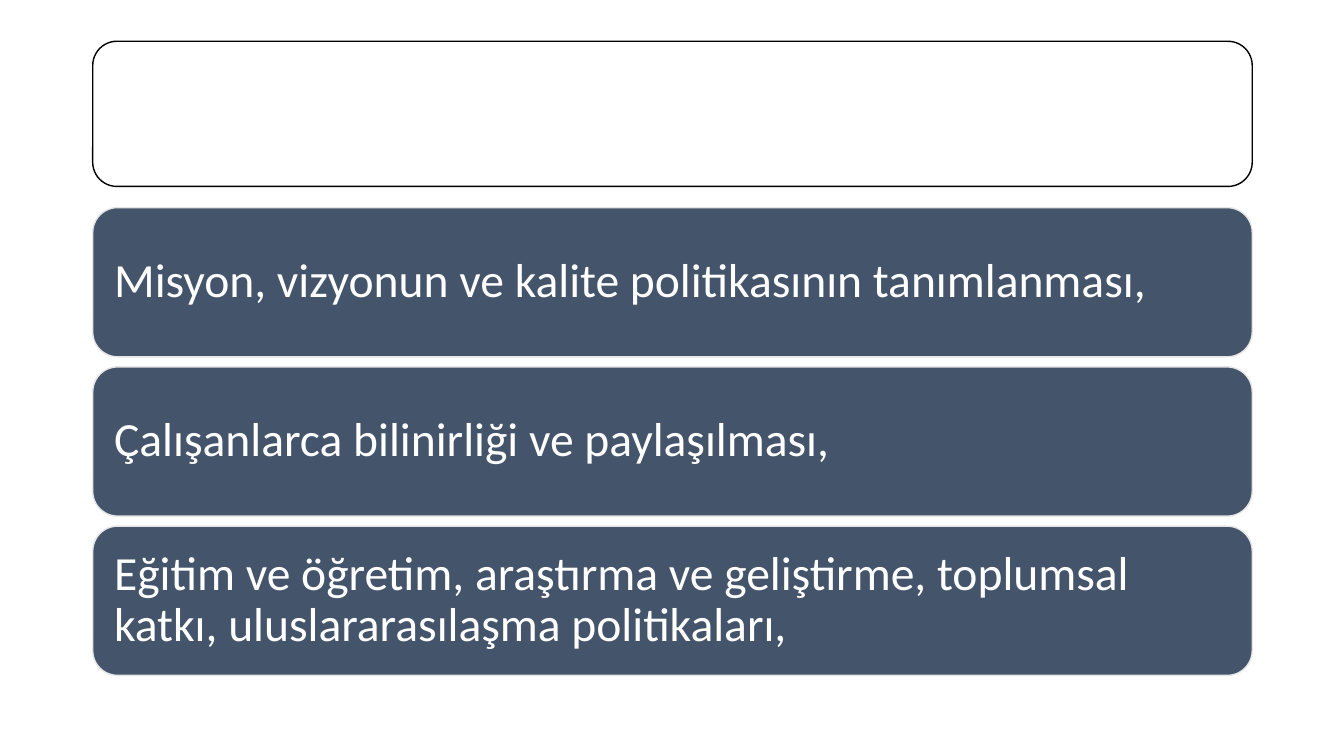
from pptx import Presentation
from pptx.dml.color import RGBColor
from pptx.enum.shapes import MSO_SHAPE
from pptx.enum.text import MSO_ANCHOR, PP_ALIGN
from pptx.util import Pt

EMU_PER_PX = 9144  # 100 px to the inch
COLORS = {"white": "FFFFFF", "slate": "44546A", "mist": "E7E6E6", "black": "000000"}

LEFT, WIDTH = 92, 1150
TITLE_TOP, TITLE_HEIGHT = 41, 144
POLICY_TOP, POLICY_HEIGHT, POLICY_PITCH = 206, 148, 158
POLICIES = [
    "Misyon, vizyonun ve kalite politikasının tanımlanması,",
    "Çalışanlarca bilinirliği ve paylaşılması,",
    "Eğitim ve öğretim, araştırma ve geliştirme, toplumsal katkı, "
    "uluslararasılaşma politikaları,",
]


def px(length):
    return length * EMU_PER_PX


def rgb(name):
    return RGBColor.from_string(COLORS[name])


class SlideBuilder:
    font = "Calibri"
    text_size = 34
    inset = 14

    def __init__(self, slide):
        self.slide = slide

    def panel(self, top, height, fill, line):
        """Add a full-width rounded box."""
        box = self.slide.shapes.add_shape(
            MSO_SHAPE.ROUNDED_RECTANGLE, px(LEFT), px(top), px(WIDTH), px(height)
        )
        box.shadow.inherit = False
        box.fill.solid()
        box.fill.fore_color.rgb = rgb(fill)
        box.line.color.rgb = rgb(line)
        box.line.width = Pt(1)
        return box

    def text_panel(self, top, height, wording):
        """Add a dark rounded box with left-aligned wording inside."""
        frame = self.panel(top, height, "slate", "mist").text_frame
        frame.word_wrap = True
        frame.vertical_anchor = MSO_ANCHOR.MIDDLE
        frame.margin_left = frame.margin_right = px(self.inset)
        frame.margin_top = frame.margin_bottom = px(self.inset)
        paragraph = frame.paragraphs[0]
        paragraph.alignment = PP_ALIGN.LEFT
        paragraph.line_spacing = 0.9
        run = paragraph.add_run()
        run.text = wording
        run.font.name = self.font
        run.font.size = Pt(self.text_size)
        run.font.color.rgb = rgb("white")


def main():
    deck = Presentation()
    deck.slide_width, deck.slide_height = px(1333), px(750)
    builder = SlideBuilder(deck.slides.add_slide(deck.slide_layouts[6]))

    builder.panel(TITLE_TOP, TITLE_HEIGHT, "white", "black")
    for row, policy in enumerate(POLICIES):
        builder.text_panel(POLICY_TOP + row * POLICY_PITCH, POLICY_HEIGHT, policy)

    deck.save("out.pptx")


if __name__ == "__main__":
    main()
